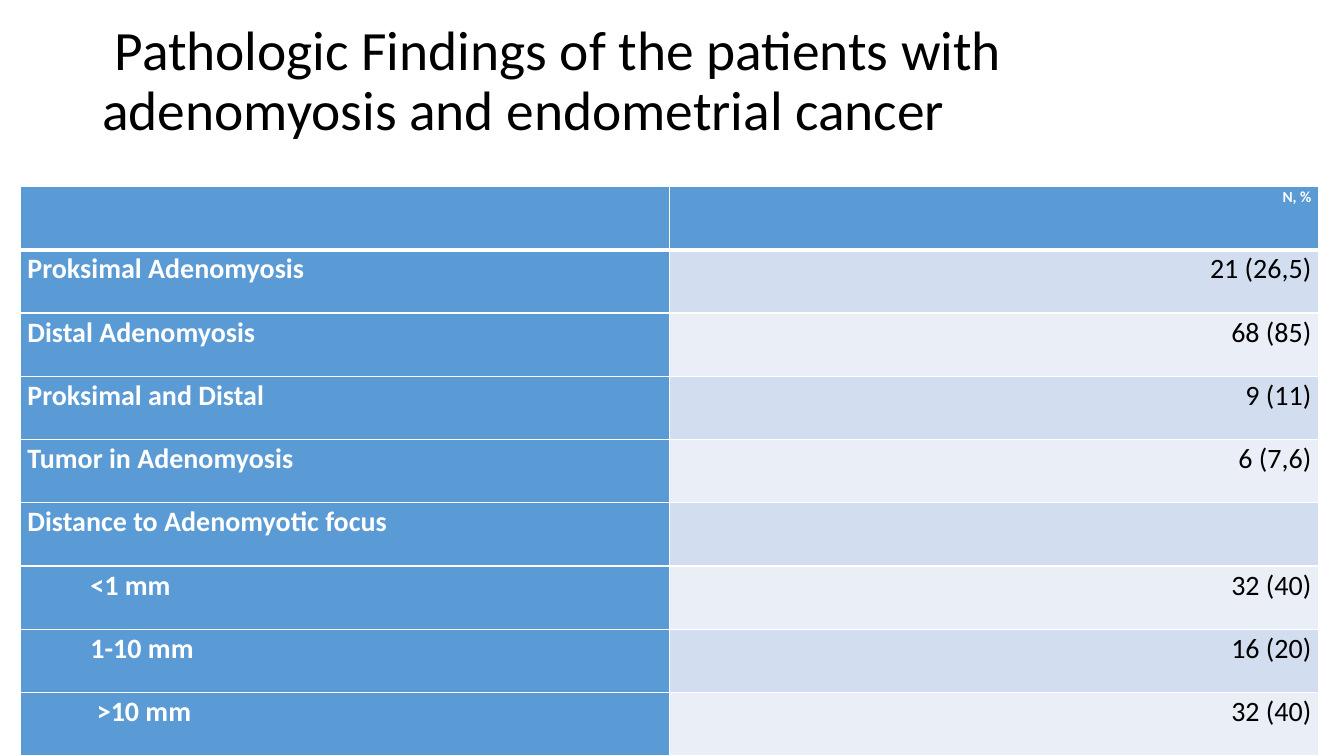
import pptx
import pptx.dml.color
import pptx.enum.text
import pptx.oxml
import pptx.oxml.ns
import pptx.util

Cm = pptx.util.Cm
Pt = pptx.util.Pt
ALIGN = pptx.enum.text.PP_ALIGN
ANCHOR = pptx.enum.text.MSO_ANCHOR

FONT = "Calibri"
WHITE, BLACK, BLUE = "FFFFFF", "000000", "5B9BD5"
BANDS = ("D2DEEF", "EAEFF7")
TITLE = "Pathologic Findings of the patients with adenomyosis and endometrial cancer"
FINDINGS = [
    ("Proksimal Adenomyosis", "21 (26,5)", 0),
    ("Distal Adenomyosis", "68 (85)", 0),
    ("Proksimal and Distal", "9 (11)", 0),
    ("Tumor in Adenomyosis", "6 (7,6)", 0),
    ("Distance to Adenomyotic focus", "", 0),
    ("<1 mm", "32 (40)", 1.59),
    ("1-10 mm", "16 (20)", 1.59),
    (">10 mm", "32 (40)", 1.75),
]


def set_all(target, values):
    """Set every attribute named in values on target."""
    for name, value in values.items():
        setattr(target, name, value)


def colour(code):
    """Turn a hex string into a colour."""
    return pptx.dml.color.RGBColor.from_string(code)


def write(para, text, size, code, bold=False, spacing=1.07, align=ALIGN.LEFT):
    """Write one formatted span into a paragraph."""
    set_all(para, {"line_spacing": spacing, "alignment": align})
    span = para.add_run()
    span.text = text
    set_all(span.font, {"name": FONT, "size": Pt(size), "bold": bold})
    span.font.color.rgb = colour(code)


def indent(para, name, length):
    """Set the left margin or the first line indent of a paragraph."""
    para._p.get_or_add_pPr().set(name, str(int(Cm(length))))


def add_title(page):
    """Add the slide title, raised within its box by a deep bottom margin."""
    box = page.shapes.add_textbox(Cm(2.33), Cm(1.01), Cm(29.21), Cm(3.68))
    set_all(box.text_frame, {
        "word_wrap": True,
        "auto_size": pptx.enum.text.MSO_AUTO_SIZE.NONE,
        "vertical_anchor": ANCHOR.MIDDLE,
        "margin_bottom": Cm(1.66),
    })
    para = box.text_frame.paragraphs[0]
    write(para, TITLE, 39.6, BLACK, spacing=0.9)
    indent(para, "indent", 0.31)


def add_border(cell, side, width):
    """Draw a white border on one side of a cell."""
    namespace = pptx.oxml.ns.nsdecls("a")
    cell._tc.get_or_add_tcPr().append(pptx.oxml.parse_xml(
        f'<a:ln{side} {namespace} w="{int(Pt(width))}"><a:solidFill>'
        f'<a:srgbClr val="{WHITE}"/></a:solidFill></a:ln{side}>'))


def fill_cell(cell, text, fill, size, code, bold, align, top=1, bottom=1, left=0):
    """Give a cell its borders, fill and text."""
    for side, width in zip("LRTB", (1, 1, top, bottom)):
        add_border(cell, side, width)
    cell.fill.solid()
    cell.fill.fore_color.rgb = colour(fill)
    set_all(cell, {
        "margin_left": Cm(0.18), "margin_right": Cm(0.18),
        "margin_top": 0, "margin_bottom": 0,
        "vertical_anchor": ANCHOR.TOP,
    })
    if text:
        para = cell.text_frame.paragraphs[0]
        write(para, text, size, code, bold, align=align)
        if left:
            indent(para, "marL", left)


def add_findings(page):
    """Add the table of findings with its header and banded rows."""
    count = len(FINDINGS) + 1
    table = page.shapes.add_table(
        count, 2, Cm(0.51), Cm(4.7), Cm(32.72), Cm(14.35)).table
    for row in table.rows:
        row.height = int(Cm(14.35) / count)
    for column, text in enumerate(("", "N, %")):
        fill_cell(table.cell(0, column), text, BLUE, 11, WHITE, True,
                  ALIGN.RIGHT, bottom=3)
    for number, (label, value, left) in enumerate(FINDINGS, 1):
        top = 3 if number == 1 else 1
        fill_cell(table.cell(number, 0), label, BLUE, 20, WHITE, True,
                  ALIGN.LEFT, top, left=left)
        fill_cell(table.cell(number, 1), value, BANDS[(number - 1) % 2], 20,
                  BLACK, False, ALIGN.RIGHT, top)


def main():
    """Build the slide and save it."""
    deck = pptx.Presentation()
    set_all(deck, {"slide_width": Cm(33.87), "slide_height": Cm(19.05)})
    page = deck.slides.add_slide(deck.slide_layouts[6])
    add_title(page)
    add_findings(page)
    deck.save("out.pptx")


if __name__ == "__main__":
    main()
